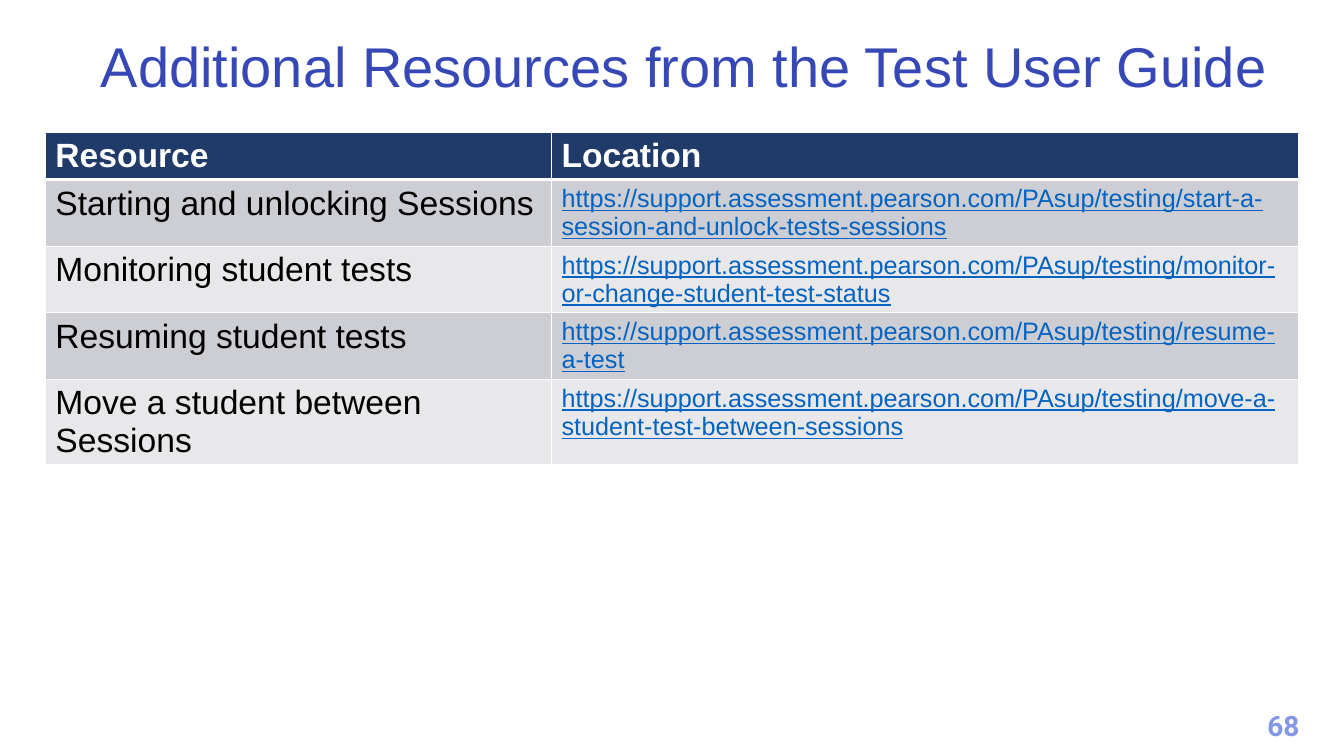
from lxml import etree
from pptx import Presentation
from pptx.dml.color import RGBColor
from pptx.enum import text
from pptx.oxml import ns
from pptx.util import Inches, Pt

TITLE = "Additional Resources from the Test User Guide"
PAGE_NUMBER = "68"
HEADERS = ("Resource", "Location")
BASE_URL = "https://support.assessment.pearson.com/PAsup/testing/"
RESOURCES = [
    ("Starting and unlocking Sessions", "start-a-session-and-unlock-tests-sessions"),
    ("Monitoring student tests", "monitor-or-change-student-test-status"),
    ("Resuming student tests", "resume-a-test"),
    ("Move a student between Sessions", "move-a-student-test-between-sessions"),
]
COLUMN_WIDTHS = (5.02, 7.41)
ROW_HEIGHTS = (0.47, 0.66, 0.66, 0.66, 0.84)
COLORS = {
    "title": "3647B6",
    "number": "8397E7",
    "header": "203B6A",
    "odd": "CDCED4",
    "even": "E8E8EB",
    "text": "000000",
    "link": "0563C1",
    "white": "FFFFFF",
}


def color(name):
    return RGBColor.from_string(COLORS[name])


def style(paragraph, size, color_name, name="Arial", bold=False, underline=False):
    font = paragraph.font
    font.name, font.size = name, Pt(size)
    font.bold, font.underline = bold, underline
    font.color.rgb = color(color_name)


def add_borders(cell, widths):
    """Draw white cell borders, with widths in points for each side tag."""
    properties = cell._tc.get_or_add_tcPr()
    for side, width in widths.items():
        line = etree.SubElement(properties, ns.qn(f"a:ln{side}"), w=str(Pt(width)))
        fill = etree.SubElement(line, ns.qn("a:solidFill"))
        etree.SubElement(fill, ns.qn("a:srgbClr"), val=COLORS["white"])


def add_title(slide):
    title = slide.shapes.title
    title.left, title.top = Inches(0.9), Inches(0.32)
    title.width, title.height = Inches(12.43), Inches(0.74)
    frame = title.text_frame
    frame.text = TITLE
    frame.vertical_anchor = text.MSO_ANCHOR.MIDDLE
    paragraph = frame.paragraphs[0]
    paragraph.alignment = text.PP_ALIGN.LEFT
    paragraph.line_spacing = 0.9
    style(paragraph, 40, "title")


def add_resource_table(slide):
    rows = [HEADERS] + [(name, BASE_URL + page) for name, page in RESOURCES]
    table = slide.shapes.add_table(
        len(rows), len(HEADERS), Inches(0.45), Inches(1.31),
        Inches(sum(COLUMN_WIDTHS)), Inches(sum(ROW_HEIGHTS)),
    ).table
    for column, width in zip(table.columns, COLUMN_WIDTHS):
        column.width = Inches(width)
    for row, height in zip(table.rows, ROW_HEIGHTS):
        row.height = Inches(height)

    for row_index, values in enumerate(rows):
        is_header = row_index == 0
        fill = "header" if is_header else "odd" if row_index % 2 else "even"
        top = 3 if row_index == 1 else 1
        bottom = 3 if is_header else 1
        for column_index, value in enumerate(values):
            cell = table.cell(row_index, column_index)
            cell.text = value
            add_borders(cell, {"L": 1, "R": 1, "T": top, "B": bottom})
            cell.fill.solid()
            cell.fill.fore_color.rgb = color(fill)
            paragraph = cell.text_frame.paragraphs[0]
            if is_header:
                style(paragraph, 24, "white", bold=True)
            elif column_index == 1:
                style(paragraph, 18, "link", underline=True)
            else:
                style(paragraph, 24, "text")


def add_page_number(slide):
    box = slide.shapes.add_textbox(Inches(12.42), Inches(6.98), Inches(0.62), Inches(0.44))
    frame = box.text_frame
    frame.word_wrap = True
    frame.text = PAGE_NUMBER
    paragraph = frame.paragraphs[0]
    paragraph.alignment = text.PP_ALIGN.CENTER
    style(paragraph, 20, "number", name="Roboto", bold=True)


def main():
    presentation = Presentation()
    presentation.slide_width, presentation.slide_height = Inches(13.33), Inches(7.5)
    slide = presentation.slides.add_slide(presentation.slide_layouts[5])
    add_title(slide)
    add_resource_table(slide)
    add_page_number(slide)
    presentation.save("out.pptx")


if __name__ == "__main__":
    main()
